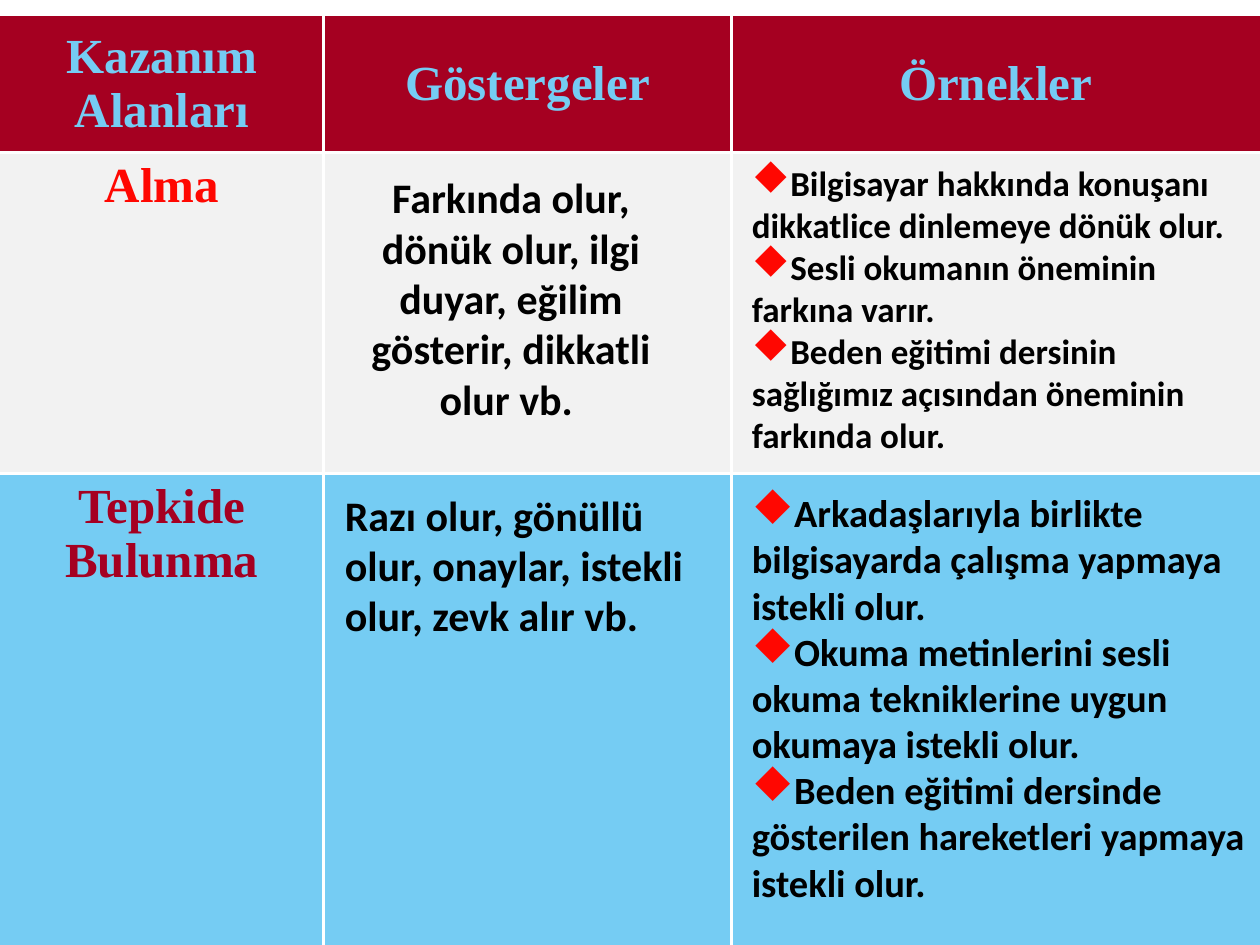
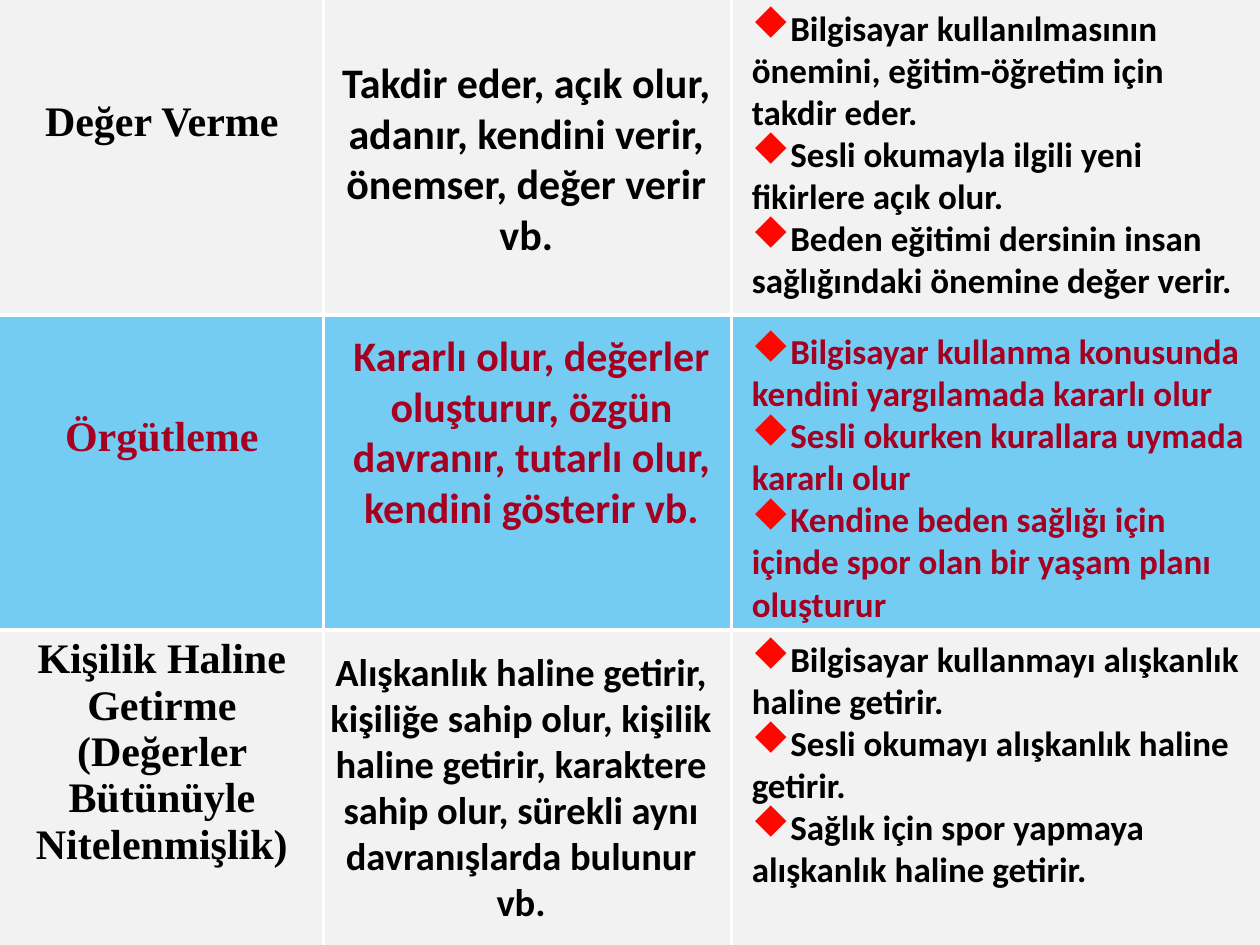
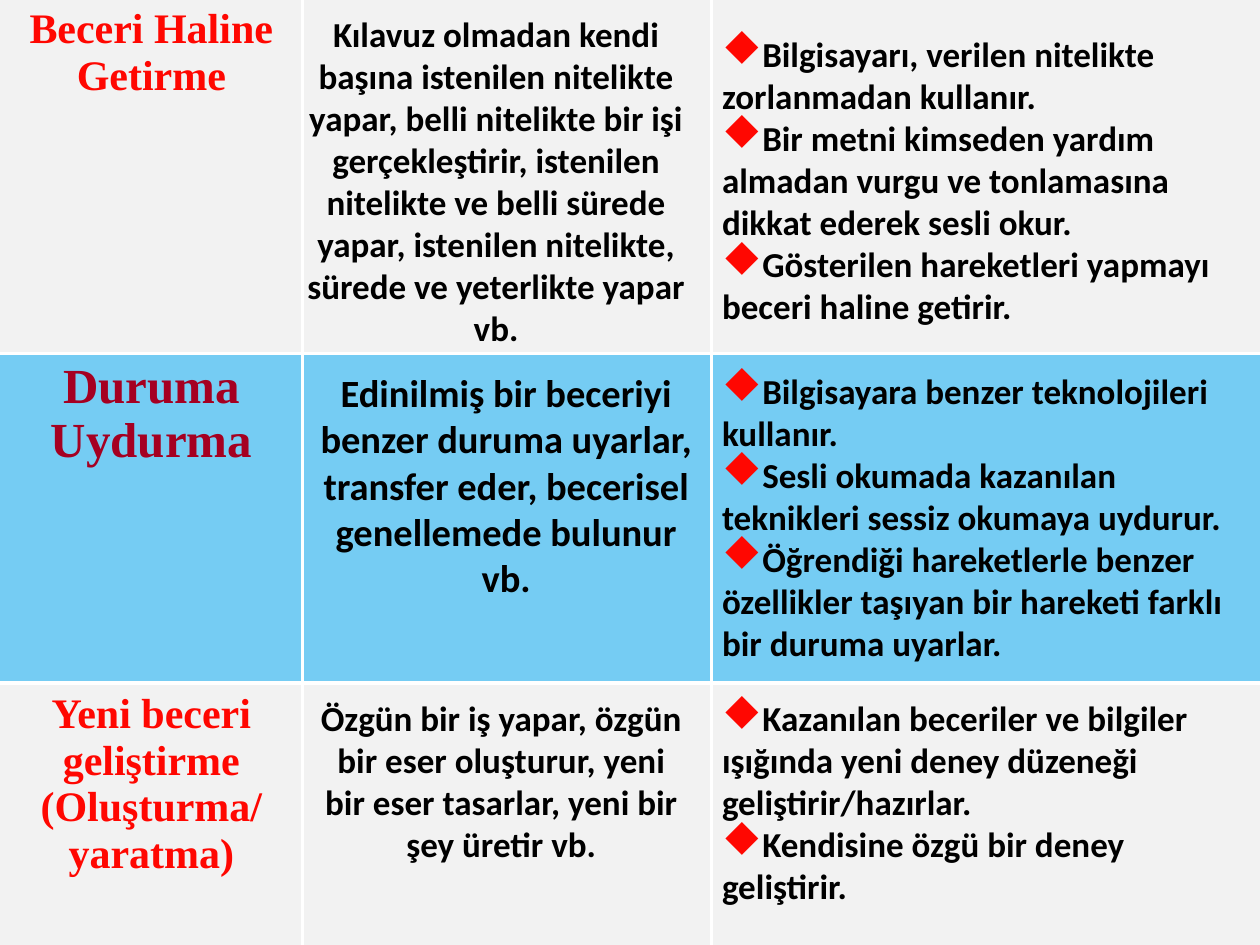
"""Builds three slides that tabulate learning domains, indicators and examples."""
from lxml import etree
from pptx import Presentation
from pptx.dml.color import RGBColor
from pptx.enum import text as t
from pptx.oxml.ns import qn
from pptx.util import Pt

CRIMSON, SKY, GREY = "A50021", "75CCF3", "F2F2F2"
RED, BLACK, WHITE = "FF0701", "000000", "FFFFFF"
HEADING_FONT, BODY_FONT = "Times New Roman", "Calibri"
DIAMOND_FONT, DIAMOND = "Wingdings", "u"
LINE_PITCH = 1.107
TOP, MIDDLE = t.MSO_ANCHOR.TOP, t.MSO_ANCHOR.MIDDLE
CENTER, LEFT = t.PP_ALIGN.CENTER, t.PP_ALIGN.LEFT


def rgb(value):
    """Turn a hex string into a colour."""
    return RGBColor.from_string(value)


def write(frame, lines, font, size, color, align):
    """Write each line as one bold paragraph and return the paragraphs."""
    for index, line in enumerate(lines):
        paragraph = frame.paragraphs[0] if index == 0 else frame.add_paragraph()
        paragraph.alignment = align
        run = paragraph.add_run()
        run.text = line
        run.font.name, run.font.size, run.font.bold = font, Pt(size), True
        run.font.color.rgb = rgb(color)
    return frame.paragraphs


def set_borders(cell, sides):
    """Draw white lines on the sides marked true and none on the others."""
    properties = cell._tc.get_or_add_tcPr()
    for index, (side, shown) in enumerate(sides.items()):
        line = etree.Element(qn(f"a:ln{side}"), w=str(Pt(2)))
        if shown:
            fill = etree.SubElement(line, qn("a:solidFill"))
            etree.SubElement(fill, qn("a:srgbClr"), val=WHITE)
        else:
            etree.SubElement(line, qn("a:noFill"))
        properties.insert(index, line)


def add_grid(slide, top, widths, heights, fills):
    """Add a full-width table with filled rows and white inner lines."""
    row_count, column_count = len(heights), len(widths)
    grid = slide.shapes.add_table(row_count, column_count, Pt(0), Pt(top),
                                  Pt(sum(widths)), Pt(sum(heights))).table
    grid.first_row = grid.horz_banding = False
    for column, width in zip(grid.columns, widths):
        column.width = Pt(width)
    for r, (height, fill) in enumerate(zip(heights, fills)):
        grid.rows[r].height = Pt(height)
        for c in range(column_count):
            cell = grid.cell(r, c)
            cell.fill.solid()
            cell.fill.fore_color.rgb = rgb(fill)
            set_borders(cell, {"L": c > 0, "R": c < column_count - 1,
                               "T": r > 0, "B": r < row_count - 1})
    return grid


def add_heading(cell, lines, color, size=28, anchor=TOP, skipped_lines=0):
    """Write a centred heading in a cell, lowered by some line heights."""
    cell.vertical_anchor = anchor
    cell.margin_top = Pt(round(3.6 + skipped_lines * size * LINE_PITCH, 2))
    write(cell.text_frame, lines, HEADING_FONT, size, color, CENTER)


def add_text(slide, area, lines, size, color=BLACK, align=CENTER):
    """Add a wrapping text box and return its paragraphs."""
    frame = slide.shapes.add_textbox(*map(Pt, area)).text_frame
    frame.word_wrap = True
    frame.auto_size = t.MSO_AUTO_SIZE.SHAPE_TO_FIT_TEXT
    return write(frame, lines, BODY_FONT, size, color, align)


def add_examples(slide, area, lines, size=20, color=BLACK, bullet_percent=110):
    """Add a list of examples with red diamond bullets."""
    for paragraph in add_text(slide, area, lines, size, color, LEFT):
        properties = paragraph._p.get_or_add_pPr()
        properties.set("marL", "0")
        properties.set("indent", "0")
        bullet_color = etree.SubElement(properties, qn("a:buClr"))
        etree.SubElement(bullet_color, qn("a:srgbClr"), val=RED)
        etree.SubElement(properties, qn("a:buSzPct"), val=str(bullet_percent * 1000))
        etree.SubElement(properties, qn("a:buFont"), typeface=DIAMOND_FONT,
                         pitchFamily="2", charset="2")
        etree.SubElement(properties, qn("a:buChar"), char=DIAMOND)


def build_receiving(slide):
    """Column headings, receiving and responding."""
    grid = add_grid(slide, 9.2, (185, 233, 302), (77.8, 183.6, 269.4),
                    (CRIMSON, GREY, SKY))
    for column, heading in enumerate(("Kazanım Alanları", "Göstergeler", "Örnekler")):
        add_heading(grid.cell(0, column), [heading], SKY, anchor=MIDDLE)
    add_heading(grid.cell(1, 0), ["Alma"], RED)
    add_heading(grid.cell(2, 0), ["Tepkide Bulunma"], CRIMSON)
    add_text(slide, (184.5, 94.5, 215, 151), [
        "Farkında olur, dönük olur, ilgi duyar, eğilim gösterir, dikkatli olur vb. "], 24)
    add_examples(slide, (422.5, 88.5, 289.5, 175), [
        "Bilgisayar hakkında konuşanı dikkatlice dinlemeye dönük olur.",
        "Sesli okumanın öneminin farkına varır.",
        "Beden eğitimi dersinin sağlığımız açısından öneminin farkında olur."])
    add_text(slide, (190, 276, 227, 94), [
        "Razı olur, gönüllü olur, onaylar, istekli olur, zevk alır vb."], 24, align=LEFT)
    add_examples(slide, (422.5, 276, 297.5, 245), [
        "Arkadaşlarıyla birlikte bilgisayarda çalışma yapmaya istekli olur.",
        "Okuma metinlerini sesli okuma tekniklerine uygun okumaya istekli olur.",
        "Beden eğitimi dersinde gösterilen hareketleri yapmaya istekli olur."], size=22)


def build_valuing(slide):
    """Valuing, organising and characterising."""
    grid = add_grid(slide, 0, (185, 233, 302), (180,) * 3, (GREY, SKY, GREY))
    add_heading(grid.cell(0, 0), ["Değer Verme"], BLACK, 24, skipped_lines=2)
    add_heading(grid.cell(1, 0), ["Örgütleme"], CRIMSON, 24, skipped_lines=2)
    add_heading(grid.cell(2, 0), [
        "Kişilik Haline Getirme (Değerler Bütünüyle Nitelenmişlik)"], BLACK, 24)
    add_text(slide, (184.5, 29, 232.5, 122), [
        "Takdir eder, açık olur, adanır, kendini verir, önemser, değer verir vb."], 24)
    add_examples(slide, (422.5, 0, 297.5, 175), [
        "Bilgisayar kullanılmasının önemini, eğitim-öğretim için takdir eder.",
        "Sesli okumayla ilgili yeni fikirlere açık olur.",
        "Beden eğitimi dersinin insan sağlığındaki önemine değer verir."])
    add_text(slide, (184.5, 185, 238.5, 122), [
        "Kararlı olur, değerler oluşturur, özgün davranır, tutarlı olur, "
        "kendini gösterir vb."], 24, CRIMSON)
    add_examples(slide, (422.5, 185, 297.5, 175), [
        "Bilgisayar kullanma konusunda kendini yargılamada kararlı olur",
        "Sesli okurken kurallara uymada kararlı olur",
        "Kendine beden sağlığı için içinde spor olan bir yaşam planı oluşturur"],
        color=CRIMSON)
    add_text(slide, (178.5, 366.5, 238.5, 166), [
        "Alışkanlık haline getirir, kişiliğe sahip olur, kişilik haline getirir, "
        "karaktere sahip olur, sürekli aynı davranışlarda bulunur vb."], 22)
    add_examples(slide, (422.5, 360.5, 297.5, 151), [
        "Bilgisayar kullanmayı alışkanlık haline getirir.",
        "Sesli okumayı alışkanlık haline getirir.",
        "Sağlık için spor yapmaya alışkanlık haline getirir."])


def build_skills(slide):
    """Mastering, adapting and creating skills."""
    widths = (173, 233.5, 313.5)
    grid = add_grid(slide, 0, widths, (202, 187), (GREY, SKY))
    add_heading(grid.cell(0, 0), ["Beceri Haline Getirme"], RED, 24)
    add_heading(grid.cell(1, 0), ["Duruma Uydurma"], CRIMSON)
    add_text(slide, (161.5, 3.5, 244, 199.5), [
        "Kılavuz olmadan kendi başına istenilen nitelikte yapar, belli nitelikte bir işi "
        "gerçekleştirir, istenilen nitelikte ve belli sürede yapar, istenilen nitelikte, "
        "sürede ve yeterlikte yapar vb."], 20)
    add_examples(slide, (405.5, 15, 306, 175), [
        "Bilgisayarı, verilen nitelikte zorlanmadan kullanır.",
        "Bir metni kimseden yardım almadan vurgu ve tonlamasına dikkat ederek sesli okur.",
        "Gösterilen hareketleri yapmayı beceri haline getirir."], bullet_percent=115)
    add_text(slide, (173, 207.5, 232.5, 139), [
        "Edinilmiş bir beceriyi benzer duruma uyarlar, transfer eder, "
        "becerisel genellemede bulunur vb."], 22)
    add_examples(slide, (405.5, 207.5, 314.5, 175), [
        "Bilgisayara benzer teknolojileri kullanır.",
        "Sesli okumada kazanılan teknikleri sessiz okumaya uydurur.",
        "Öğrendiği hareketlerle benzer özellikler taşıyan bir hareketi farklı "
        "bir duruma uyarlar."], bullet_percent=115)
    creation = add_grid(slide, 391.5, widths, (148.5,), (GREY,))
    add_heading(creation.cell(0, 0), ["Yeni beceri geliştirme", "(Oluşturma/yaratma)"],
                RED, 24)
    add_text(slide, (173, 394.5, 227, 127.5), [
        "Özgün bir iş yapar, özgün bir eser oluşturur, yeni bir eser tasarlar, "
        "yeni bir şey üretir vb."], 20)
    add_examples(slide, (405.5, 394.5, 314.5, 127.5), [
        "Kazanılan beceriler ve bilgiler ışığında yeni deney düzeneği geliştirir/hazırlar.",
        "Kendisine özgü bir deney geliştirir."], bullet_percent=115)


def main():
    """Build and save the presentation."""
    deck = Presentation()
    deck.slide_width, deck.slide_height = Pt(720), Pt(540)
    for build in (build_receiving, build_valuing, build_skills):
        build(deck.slides.add_slide(deck.slide_layouts[6]))
    deck.save("out.pptx")


if __name__ == "__main__":
    main()
